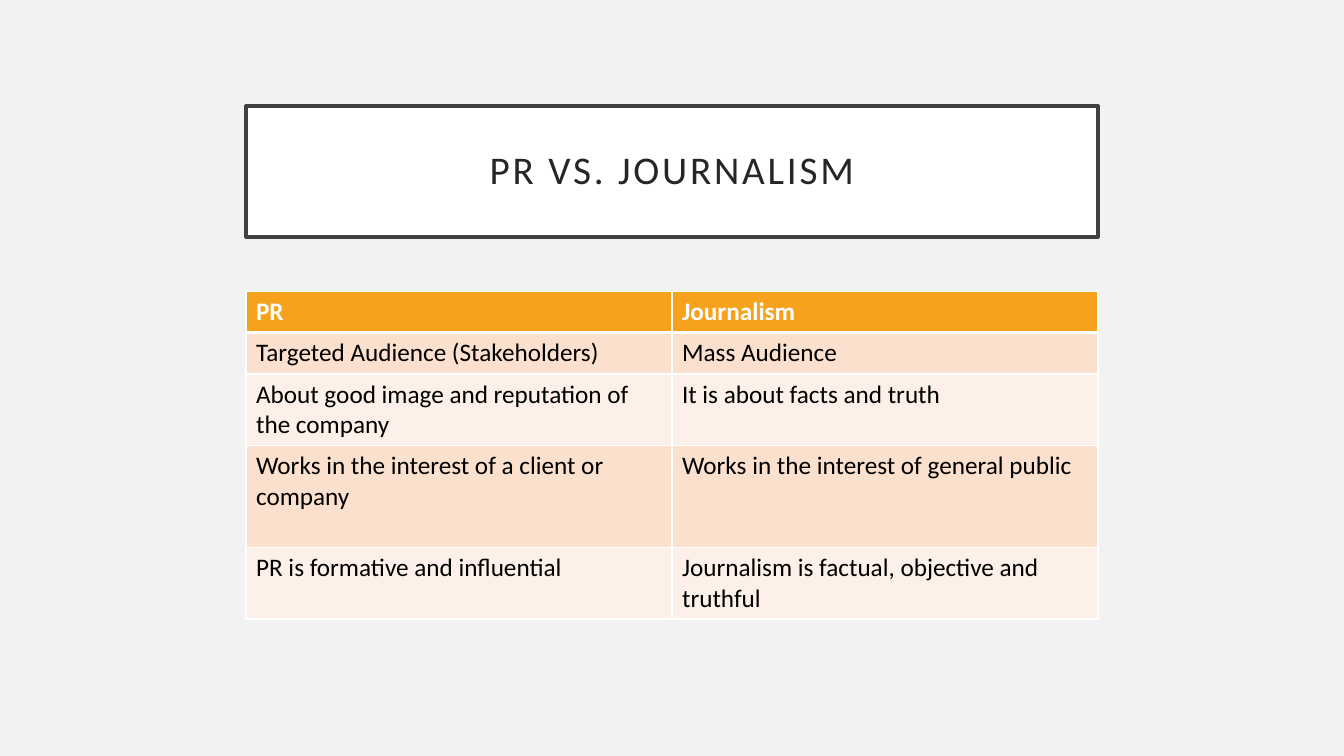
"""Build a slide that compares PR with journalism in a two-column table."""
from lxml.etree import SubElement
from pptx import Presentation
from pptx.dml.color import RGBColor
from pptx.enum.text import MSO_ANCHOR, MSO_AUTO_SIZE, PP_ALIGN
from pptx.oxml.ns import qn
from pptx.util import Inches, Pt

TITLE = "PR VS. JOURNALISM"
ROWS = [
    ("PR", "Journalism"),
    ("Targeted Audience (Stakeholders)", "Mass Audience"),
    ("About good image and reputation of the company", "It is about facts and truth"),
    ("Works in the interest of a client or company", "Works in the interest of general public"),
    ("PR is formative and influential", "Journalism is factual, objective and truthful"),
]
ROW_HEIGHTS = [0.41, 0.41, 0.71, 1.01, 0.71]
COLORS = {
    "background": "F2F2F2", "white": "FFFFFF", "frame": "404040", "title": "262626",
    "header": "F6A21D", "odd": "FBE0CD", "even": "FDF0E8", "body": "000000",
}
FONT = "Calibri"
WIDTH, HEIGHT = 13.33, 7.5
CONTENT_W = 8.45
LEFT = (WIDTH - CONTENT_W) / 2
TITLE_TOP, TITLE_H = 1.05, 1.3
TABLE_TOP = 2.89


def rgb(name):
    return RGBColor.from_string(COLORS[name])


def paint(fill, color):
    fill.solid()
    fill.fore_color.rgb = rgb(color)


def add_run(p, text, size, color, bold=False):
    r = p.add_run()
    r.text = text
    r.font.name = FONT
    r.font.size = Pt(size)
    r.font.bold = bold
    r.font.color.rgb = rgb(color)
    return r


def add_borders(cell, widths):
    tc_pr = cell._tc.get_or_add_tcPr()
    for side, width in widths.items():
        ln = SubElement(tc_pr, qn(f"a:ln{side}"), w=str(Pt(width)))
        fill = SubElement(ln, qn("a:solidFill"))
        SubElement(fill, qn("a:srgbClr"), val=COLORS["white"])


def add_title(s):
    sp = s.shapes.title
    sp.left, sp.top = Inches(LEFT), Inches(TITLE_TOP)
    sp.width, sp.height = Inches(CONTENT_W), Inches(TITLE_H)
    paint(sp.fill, "white")
    sp.line.color.rgb = rgb("frame")
    sp.line.width = Pt(2.5)
    tf = sp.text_frame
    tf.word_wrap = True
    tf.auto_size = MSO_AUTO_SIZE.NONE
    tf.vertical_anchor = MSO_ANCHOR.MIDDLE
    tf.margin_left = tf.margin_right = tf.margin_top = tf.margin_bottom = Inches(0.2)
    p = tf.paragraphs[0]
    p.alignment = PP_ALIGN.CENTER
    p.line_spacing = 0.9
    r = add_run(p, TITLE, 28, "title")
    r.font._element.set("spc", "200")


def add_comparison(s):
    columns = len(ROWS[0])
    table = s.shapes.add_table(
        len(ROWS), columns, Inches(LEFT), Inches(TABLE_TOP),
        Inches(CONTENT_W), Inches(sum(ROW_HEIGHTS))).table
    for column in table.columns:
        column.width = Inches(CONTENT_W / columns)
    for i, (texts, height) in enumerate(zip(ROWS, ROW_HEIGHTS)):
        table.rows[i].height = Inches(height)
        header = i == 0
        fill = "header" if header else "odd" if i % 2 else "even"
        widths = {"L": 1, "R": 1, "T": 3 if i == 1 else 1, "B": 3 if header else 1}
        for j, text in enumerate(texts):
            cell = table.cell(i, j)
            add_borders(cell, widths)
            paint(cell.fill, fill)
            add_run(cell.text_frame.paragraphs[0], text, 18,
                    "white" if header else "body", header)


def main():
    prs = Presentation()
    prs.slide_width, prs.slide_height = Inches(WIDTH), Inches(HEIGHT)
    s = prs.slides.add_slide(prs.slide_layouts[5])
    paint(s.background.fill, "background")
    add_title(s)
    add_comparison(s)
    prs.save("out.pptx")


if __name__ == "__main__":
    main()
